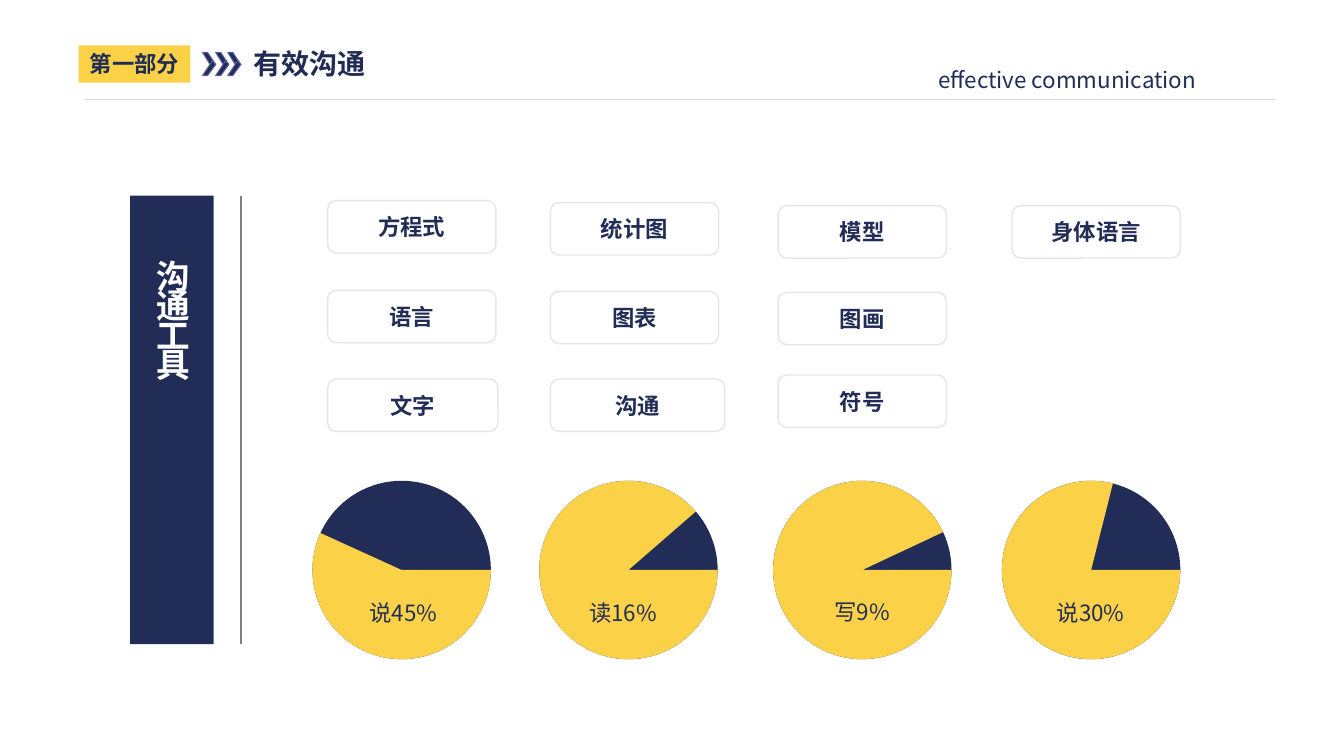
from lxml.etree import SubElement
from pptx import Presentation
from pptx.dml.color import RGBColor
from pptx.enum.shapes import MSO_CONNECTOR, MSO_SHAPE as Shape
from pptx.enum.text import MSO_ANCHOR as Anchor, PP_ALIGN as Align
from pptx.oxml.ns import qn
from pptx.util import Pt

PX = 9144
FONT = "Noto Sans CJK SC"
COLORS = {
    "navy": "222D57",
    "ink": "212C56",
    "yellow": "FBD247",
    "white": "FFFFFF",
    "border": "E7E6E6",
    "rule": "D9D9D9",
    "divider": "808080",
    "edge": "5C629E",
}
CARDS = [
    ("方程式", 325, 199, 167),
    ("语言", 325, 288, 167),
    ("文字", 325, 376, 169),
    ("统计图", 546, 201, 167),
    ("图表", 546, 289, 167),
    ("沟通", 546, 376, 173),
    ("模型", 772, 204, 167),
    ("图画", 772, 290, 167),
    ("符号", 772, 372, 167),
    ("身体语言", 1004, 204, 167),
]
PIES = [
    ("说45%", 310, 204.48, 324, 589, 152),
    ("读16%", 535, 319.02, 563, 589, 110),
    ("写9%", 767, 334.86, 812, 588, 87),
    ("说30%", 994, 284.11, 1027, 589, 110),
]
CHEVRON_LEFTS = (201, 214, 226)
CHEVRON_X = (0, 10, 13, 5)
CHEVRON_HALVES = ((52, 68, 64, 52), (75, 60, 64, 75))


def color(name):
    return RGBColor.from_string(COLORS[name])


def write(box, text, size=16, ink="navy", bold=False, align=Align.CENTER,
          inset=10, vertical=False, spacing=None):
    frame = box.text_frame
    frame.word_wrap = True
    frame.vertical_anchor = Anchor.MIDDLE
    sides, ends = (0, 5) if vertical else (inset, 0)
    frame.margin_left = sides * PX
    frame.margin_right = 0 if vertical else min(inset, 10) * PX
    frame.margin_top = frame.margin_bottom = ends * PX
    if vertical:
        frame._txBody.bodyPr.set("vert", "eaVert")
    para = frame.paragraphs[0]
    para.alignment = align
    span = para.add_run()
    span.text = text
    span.font.size = Pt(size)
    span.font.bold = bold
    span.font.name = FONT
    span.font.color.rgb = color(ink)
    props = span.font._element
    SubElement(props, qn("a:ea")).set("typeface", FONT)
    if spacing is not None:
        props.set("spc", str(spacing * 100))


class Board:
    def __init__(self, page):
        self.shapes = page.shapes

    def paint(self, shape, fill, line=None, weight=1):
        shape.shadow.inherit = False
        shape.fill.solid()
        shape.fill.fore_color.rgb = color(fill)
        if line:
            shape.line.color.rgb = color(line)
            shape.line.width = Pt(weight)
        else:
            shape.line.fill.background()
        return shape

    def shape(self, kind, left, top, width, height, fill, line=None):
        shape = self.shapes.add_shape(
            kind, left * PX, top * PX, width * PX, height * PX)
        return self.paint(shape, fill, line)

    def text(self, words, left, top, width, height, **style):
        box = self.shapes.add_textbox(
            left * PX, top * PX, width * PX, height * PX)
        write(box, words, **style)

    def line(self, x1, y1, x2, y2, ink, weight):
        line = self.shapes.add_connector(
            MSO_CONNECTOR.STRAIGHT, x1 * PX, y1 * PX, x2 * PX, y2 * PX)
        line.line.color.rgb = color(ink)
        line.line.width = Pt(weight)
        SubElement(line._element.spPr, qn("a:effectLst"))

    def outline(self, points, fill, line, weight):
        builder = self.shapes.build_freeform(*points[0], scale=PX)
        builder.add_line_segments(points[1:], close=True)
        self.paint(builder.convert_to_shape(), fill, line, weight)

    def card(self, words, left, top, width):
        box = self.shape(
            Shape.ROUNDED_RECTANGLE, left, top, width, 52, "white", "border")
        write(box, words, bold=True)

    def pie(self, words, left, angle, text_left, text_top, text_width):
        self.shape(Shape.OVAL, left, 477, 177, 177, "navy")
        sector = self.shape(Shape.PIE, left, 477, 177, 177, "yellow")
        sector.adjustments[0] = 0
        sector.adjustments[1] = angle * 0.6
        self.text(words, text_left, text_top, text_width, 37)


def main():
    deck = Presentation()
    deck.slide_width, deck.slide_height = 12192000, 750 * PX
    board = Board(deck.slides.add_slide(deck.slide_layouts[6]))

    for card in CARDS:
        board.card(*card)

    board.text("有效沟通", 242, 41, 178, 44, size=20, ink="ink", bold=True,
               align=Align.JUSTIFY)
    tag = board.shape(Shape.RECTANGLE, 78, 45, 111, 37, "yellow")
    write(tag, "第一部分", ink="ink", bold=True, inset=5)
    for left in CHEVRON_LEFTS:
        for half in CHEVRON_HALVES:
            points = [(left + x, y) for x, y in zip(CHEVRON_X, half)]
            board.outline(points, "ink", "edge", 0.75)

    board.line(239, 194, 239, 639, "divider", 1.5)
    board.shape(Shape.RECTANGLE, 129, 194, 83, 445, "navy")
    board.text("沟通工具", 140, 248, 61, 327, size=24, ink="white", bold=True,
               align=Align.JUSTIFY, vertical=True, spacing=-3)

    for pie in PIES:
        board.pie(*pie)

    board.line(84, 99, 1265, 99, "rule", 0.5)
    board.text("effective communication", 871, 60, 376, 37,
               align=Align.JUSTIFY, inset=60)
    deck.save("out.pptx")


if __name__ == "__main__":
    main()
